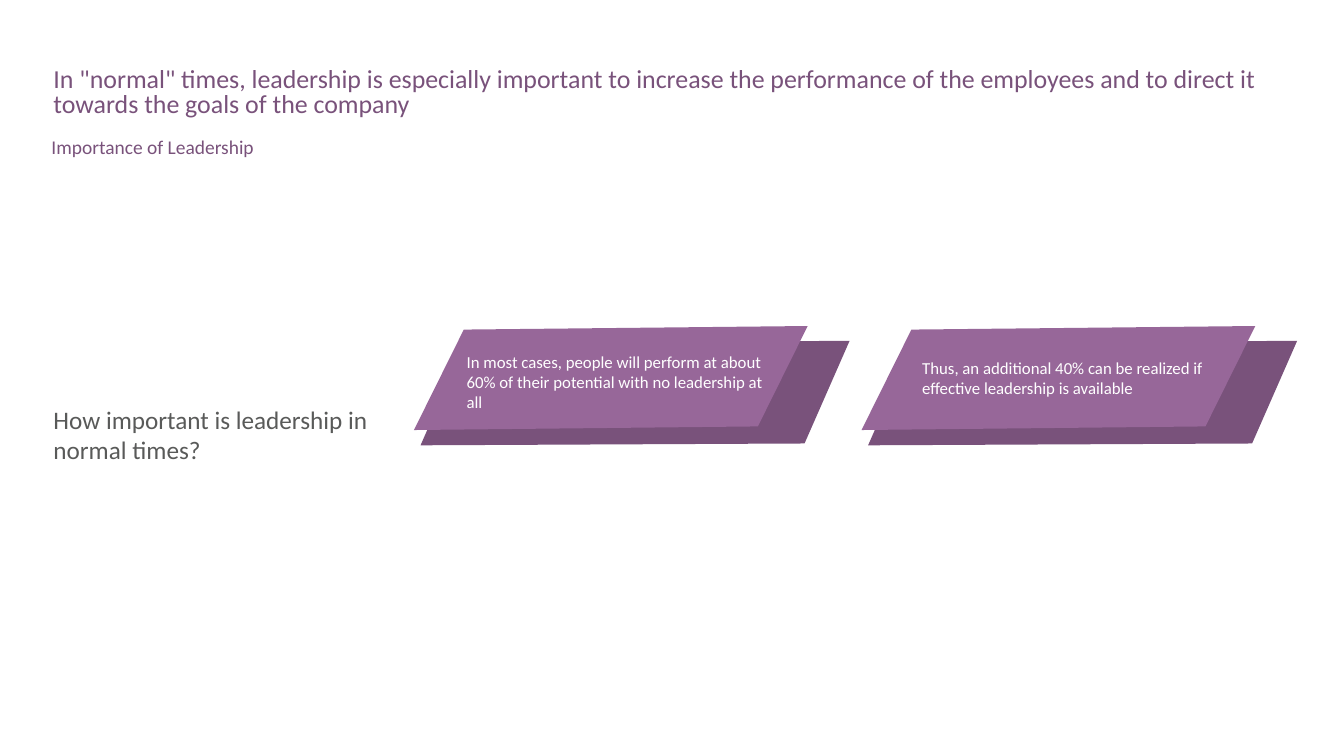
from dataclasses import dataclass

from pptx import Presentation
from pptx.dml.color import RGBColor
from pptx.enum.shapes import MSO_SHAPE
from pptx.enum.text import MSO_ANCHOR, MSO_AUTO_SIZE, PP_ALIGN
from pptx.util import Pt


@dataclass(frozen=True)
class Theme:
    font: str = "Calibri"
    dark: RGBColor = RGBColor(0x79, 0x52, 0x7B)
    light: RGBColor = RGBColor(0x97, 0x67, 0x99)
    grey: RGBColor = RGBColor(0x59, 0x5A, 0x59)
    white: RGBColor = RGBColor(0xFF, 0xFF, 0xFF)
    headline_size: float = 18.5
    question_size: float = 18
    subtitle_size: float = 13.9
    card_size: float = 12


THEME = Theme()
CARD_PITCH = 319.7


def write(holder, text, size, color, spacing=1.0, anchor=MSO_ANCHOR.TOP):
    frame = holder.text_frame
    frame.text = text
    frame.word_wrap = True
    frame.auto_size = MSO_AUTO_SIZE.NONE
    frame.vertical_anchor = anchor
    frame.margin_left = frame.margin_right = Pt(7.2)
    frame.margin_top = frame.margin_bottom = Pt(3.6)
    paragraph = frame.paragraphs[0]
    paragraph.alignment = PP_ALIGN.LEFT
    paragraph.line_spacing = spacing
    paragraph.space_before = Pt(0)
    font = paragraph.runs[0].font
    font.name = THEME.font
    font.size = Pt(size)
    font.bold = False
    font.color.rgb = color


def place(holder, left, top, width, height):
    holder.left, holder.top = Pt(left), Pt(top)
    holder.width, holder.height = Pt(width), Pt(height)


def add_heading(headline, subtitle, left, top, width):
    place(headline, left, top, width, 46)
    write(headline, 'In "normal" times, leadership is especially important to increase '
          "the performance of the employees and to direct it towards the goals of the company",
          THEME.headline_size, THEME.dark, spacing=0.8)
    place(subtitle, left - 1.5, top + 51.8, width + 1.5, 20.2)
    write(subtitle, "Importance of Leadership", THEME.subtitle_size, THEME.dark, spacing=0.7)


def add_question(question, left, top, width, height):
    place(question, left, top, width, height)
    write(question, "How important is leadership in normal times?",
          THEME.question_size, THEME.grey, anchor=MSO_ANCHOR.MIDDLE)


def add_slant(slide, center_x, center_y, length, rotation, color):
    breadth = 191.5
    slant = slide.shapes.add_shape(
        MSO_SHAPE.PARALLELOGRAM, Pt(center_x - breadth / 2), Pt(center_y - length / 2),
        Pt(breadth), Pt(length))
    slant.adjustments[0] = 0.582
    slant.rotation = rotation
    slant._element.spPr.xfrm.set("flipH", "1")
    slant.shadow.inherit = False
    slant.fill.solid()
    slant.fill.fore_color.rgb = color
    slant.line.fill.background()


def add_card(slide, left, top, text, text_left, text_top, text_height):
    add_slant(slide, left + 155.6, top + 45.8, 250.6, 293.7, THEME.dark)
    add_slant(slide, left + 138.3, top + 35, 218.9, 296.4, THEME.light)
    statement = slide.shapes.add_textbox(
        Pt(left + text_left), Pt(top + text_top), Pt(226), Pt(text_height))
    write(statement, text, THEME.card_size, THEME.white)


def add_cards(slide, left, top):
    add_card(slide, left + CARD_PITCH, top,
             "Thus, an additional 40% can be realized if effective leadership is available",
             33.9, 17, 36)
    add_card(slide, left, top,
             "In most cases, people will perform at about 60% of their potential "
             "with no leadership at all",
             28.2, 12.7, 51)


def main():
    presentation = Presentation()
    presentation.slide_width, presentation.slide_height = Pt(960), Pt(540)
    slide = presentation.slides.add_slide(presentation.slide_layouts.get_by_name("Comparison"))
    headline, question, left_content, subtitle, right_content = slide.placeholders
    for unused in (left_content, right_content):
        unused.element.getparent().remove(unused.element)
    add_heading(headline, subtitle, 31, 45.4, 903)
    add_question(question, 31, 129, 251.3, 363)
    add_cards(slide, 298, 235)
    presentation.save("out.pptx")


if __name__ == "__main__":
    main()
